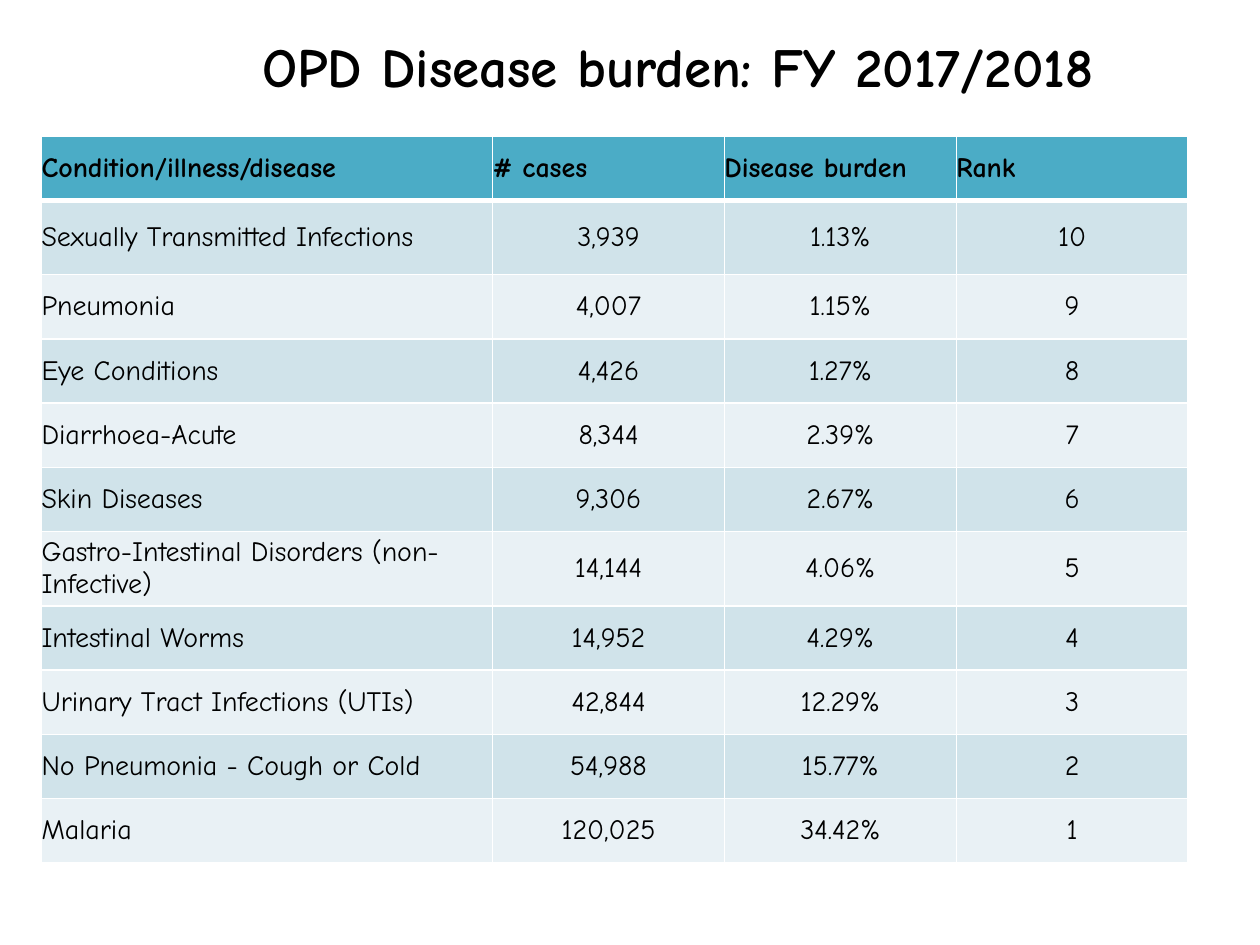
from lxml import etree
from pptx import Presentation
from pptx.dml.color import RGBColor
from pptx.enum.text import MSO_ANCHOR, PP_ALIGN
from pptx.oxml.ns import qn
from pptx.util import Inches, Pt

LEFT, CENTER = PP_ALIGN.LEFT, PP_ALIGN.CENTER
MIDDLE = MSO_ANCHOR.MIDDLE
FONT = "Comic Neue"
BLACK = RGBColor(0x00, 0x00, 0x00)
WHITE = RGBColor(0xFF, 0xFF, 0xFF)
TEAL = RGBColor(0x4B, 0xAC, 0xC6)
BANDS = (RGBColor(0xD0, 0xE3, 0xEA), RGBColor(0xE9, 0xF1, 0xF5))

TITLE = "OPD Disease burden: FY 2017/2018"
HEADINGS = ("Condition/illness/disease", "# cases", "Disease burden", "Rank")
DISEASES = [
    ("Sexually Transmitted Infections", "3,939", "1.13%", "10"),
    ("Pneumonia", "4,007", "1.15%", "9"),
    ("Eye Conditions", "4,426", "1.27%", "8"),
    ("Diarrhoea-Acute", "8,344", "2.39%", "7"),
    ("Skin Diseases", "9,306", "2.67%", "6"),
    ("Gastro-Intestinal Disorders (non-Infective)", "14,144", "4.06%", "5"),
    ("Intestinal Worms", "14,952", "4.29%", "4"),
    ("Urinary Tract Infections (UTIs)", "42,844", "12.29%", "3"),
    ("No Pneumonia - Cough or Cold", "54,988", "15.77%", "2"),
    ("Malaria", "120,025", "34.42%", "1"),
]
COLUMN_WIDTHS = (3.58, 1.84, 1.84, 1.84)
ROW_HEIGHT, TALL_ROW_HEIGHT = 0.51, 0.59
TALL_ROWS = (1, 6)


def write(frame, text, size=16, bold=False, align=LEFT):
    frame.word_wrap = True
    paragraph = frame.paragraphs[0]
    paragraph.alignment = align
    run = paragraph.add_run()
    run.text = text
    run.font.name = FONT
    run.font.size = Pt(size)
    run.font.bold = bold
    run.font.color.rgb = BLACK


def add_borders(cell, top, bottom):
    properties = cell._tc.get_or_add_tcPr()
    for tag, width in (("a:lnL", 1), ("a:lnR", 1), ("a:lnT", top), ("a:lnB", bottom)):
        border = etree.SubElement(properties, qn(tag), w=str(Pt(width)))
        fill = etree.SubElement(border, qn("a:solidFill"))
        etree.SubElement(fill, qn("a:srgbClr"), val=str(WHITE))


def add_title(slide):
    title = slide.shapes.add_textbox(Inches(1.17), Inches(0.13), Inches(8.42), Inches(0.78))
    title.text_frame.vertical_anchor = MIDDLE
    write(title.text_frame, TITLE, size=31.5, bold=True, align=CENTER)


def add_disease_table(slide):
    rows = [HEADINGS] + DISEASES
    heights = [TALL_ROW_HEIGHT if r in TALL_ROWS else ROW_HEIGHT for r in range(len(rows))]
    table = slide.shapes.add_table(
        len(rows), len(HEADINGS), Inches(0.33), Inches(1.08),
        Inches(sum(COLUMN_WIDTHS)), Inches(sum(heights))).table
    for column, width in zip(table.columns, COLUMN_WIDTHS):
        column.width = Inches(width)
    for r, (values, height) in enumerate(zip(rows, heights)):
        table.rows[r].height = Inches(height)
        heading = r == 0
        for c, value in enumerate(values):
            cell = table.cell(r, c)
            cell.margin_left = cell.margin_right = cell.margin_top = cell.margin_bottom = 0
            cell.vertical_anchor = MIDDLE
            add_borders(cell, top=3 if r == 1 else 1, bottom=3 if heading else 1)
            cell.fill.solid()
            cell.fill.fore_color.rgb = TEAL if heading else BANDS[(r - 1) % 2]
            write(cell.text_frame, value, bold=heading,
                  align=LEFT if heading or c == 0 else CENTER)


def main():
    presentation = Presentation()
    presentation.slide_width, presentation.slide_height = Inches(10), Inches(7.5)
    slide = presentation.slides.add_slide(presentation.slide_layouts[6])
    add_title(slide)
    add_disease_table(slide)
    presentation.save("out.pptx")


if __name__ == "__main__":
    main()
